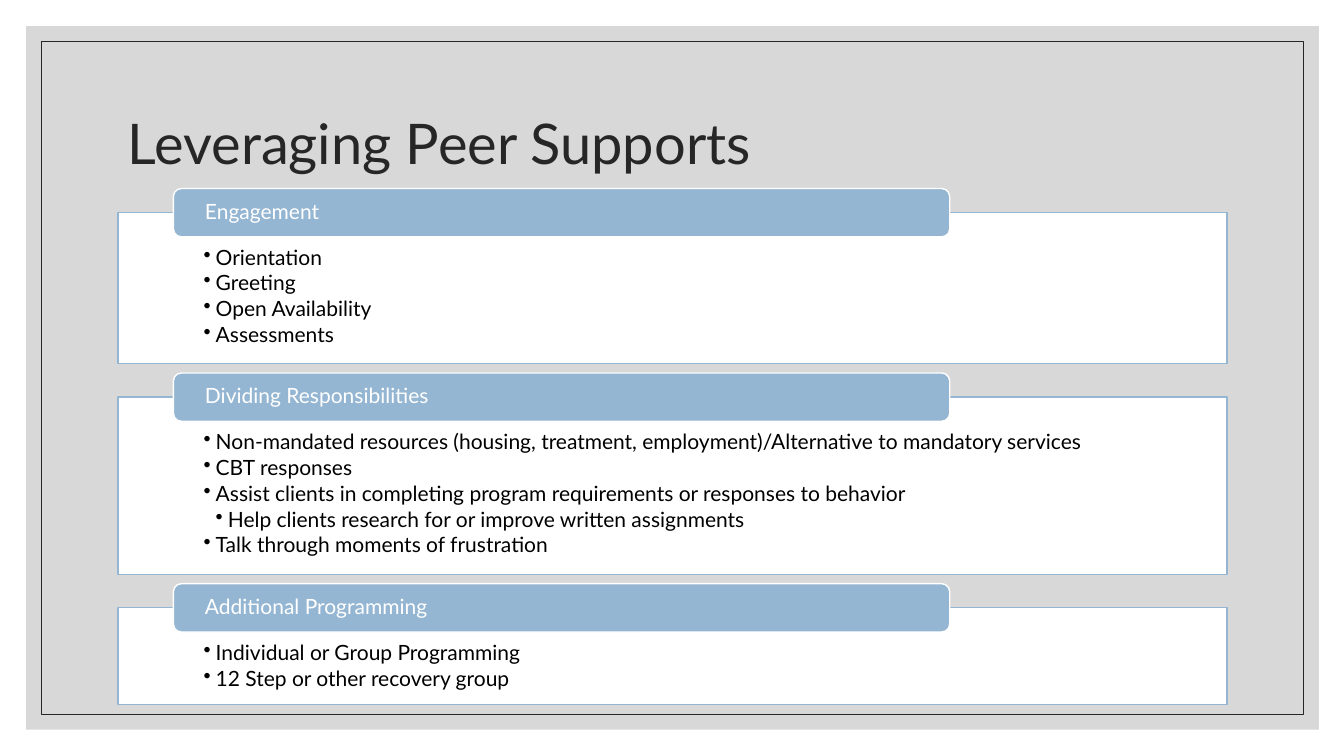
from dataclasses import dataclass

from lxml import etree
from pptx import Presentation
from pptx.dml.color import RGBColor
from pptx.enum.shapes import MSO_SHAPE
from pptx.enum.text import MSO_ANCHOR, PP_ALIGN
from pptx.oxml.ns import qn
from pptx.shapes.autoshape import Shape
from pptx.slide import Slide
from pptx.text.text import TextFrame, _Paragraph
from pptx.util import Emu, Pt

RECTANGLE = MSO_SHAPE.RECTANGLE
ROUNDED = MSO_SHAPE.ROUNDED_RECTANGLE
TOP = MSO_ANCHOR.TOP
MIDDLE = MSO_ANCHOR.MIDDLE
LEFT = PP_ALIGN.LEFT

EMU_PER_PX = 9144
FONT = "Lato"
DARK = "262626"
BLUE = "94B6D2"
WHITE = "FFFFFF"
BLACK = "000000"
GREY = "BFBFBF"

PANEL_LEFT, PANEL_WIDTH, FIRST_PANEL_TOP, PANEL_GAP = 117, 1100, 211, 33
HEADER_LEFT, HEADER_WIDTH, HEADER_HEIGHT = 172, 770, 48
BULLET_INDENT = 12


@dataclass(frozen=True)
class Box:
    left: int
    top: int
    width: int
    height: int


@dataclass(frozen=True)
class Bullet:
    text: str
    level: int = 1


@dataclass(frozen=True)
class Section:
    heading: str
    height: int
    bullets: tuple[Bullet, ...]


SECTIONS = (
    Section("Engagement", 150, (
        Bullet("Orientation"),
        Bullet("Greeting"),
        Bullet("Open Availability"),
        Bullet("Assessments"),
    )),
    Section("Dividing Responsibilities", 176, (
        Bullet("Non-mandated resources (housing, treatment, employment)"
               "/Alternative to mandatory services"),
        Bullet("CBT responses"),
        Bullet("Assist clients in completing program requirements or responses to behavior"),
        Bullet("Help clients research for or improve written assignments", level=2),
        Bullet("Talk through moments of frustration"),
    )),
    Section("Additional Programming", 96, (
        Bullet("Individual or Group Programming"),
        Bullet("12 Step or other recovery group"),
    )),
)


def px(length: int) -> Emu:
    """Turn whole pixels into EMU."""
    return Emu(length * EMU_PER_PX)


def color(value: str) -> RGBColor:
    """Turn a hex string into a colour."""
    return RGBColor.from_string(value)


def add_box(slide: Slide, kind: MSO_SHAPE, box: Box, fill: str | None = None,
            opacity: int = 100, line: str | None = None, line_width: float = 1) -> Shape:
    """Add a flat shape with an optional fill and outline."""
    shape = slide.shapes.add_shape(
        kind, px(box.left), px(box.top), px(box.width), px(box.height))
    shape.shadow.inherit = False
    if fill:
        shape.fill.solid()
        shape.fill.fore_color.rgb = color(fill)
        if opacity < 100:
            swatch = shape.fill._xPr.find(qn("a:solidFill"))[0]
            etree.SubElement(swatch, qn("a:alpha"), val=str(opacity * 1000))
    else:
        shape.fill.background()
    if line:
        shape.line.color.rgb = color(line)
        shape.line.width = Pt(line_width)
    else:
        shape.line.fill.background()
    return shape


def set_frame(frame: TextFrame, anchor: MSO_ANCHOR, side: int, top: int, bottom: int) -> None:
    """Set wrapping, anchor and insets of a text frame."""
    frame.word_wrap = True
    frame.vertical_anchor = anchor
    frame.margin_left = frame.margin_right = px(side)
    frame.margin_top, frame.margin_bottom = px(top), px(bottom)


def write(paragraph: _Paragraph, text: str, size: int, font_color: str) -> None:
    """Fill a left-aligned paragraph with styled text."""
    paragraph.text = text
    paragraph.alignment = LEFT
    paragraph.line_spacing = 0.9
    paragraph.font.name = FONT
    paragraph.font.size = Pt(size)
    paragraph.font.color.rgb = color(font_color)


def write_bullet(paragraph: _Paragraph, bullet: Bullet) -> None:
    """Write one bulleted paragraph at its level."""
    write(paragraph, bullet.text, 15, BLACK)
    paragraph.level = bullet.level
    paragraph.space_after = Pt(2.25)
    properties = paragraph._p.get_or_add_pPr()
    properties.set("marL", str(px(BULLET_INDENT * bullet.level)))
    properties.set("indent", str(px(-BULLET_INDENT)))
    marker = etree.Element(qn("a:buChar"), char="•")
    properties.find(qn("a:defRPr")).addprevious(marker)


def add_section(slide: Slide, section: Section, top: int) -> None:
    """Draw a bulleted panel with its overlapping heading."""
    panel = add_box(slide, RECTANGLE, Box(PANEL_LEFT, top, PANEL_WIDTH, section.height),
                    WHITE, line=BLUE)
    frame = panel.text_frame
    set_frame(frame, TOP, 85, 34, 12)
    for index, bullet in enumerate(section.bullets):
        write_bullet(frame.add_paragraph() if index else frame.paragraphs[0], bullet)

    header_top = top - HEADER_HEIGHT // 2
    header = add_box(slide, ROUNDED, Box(HEADER_LEFT, header_top, HEADER_WIDTH, HEADER_HEIGHT),
                     BLUE, line=WHITE)
    set_frame(header.text_frame, MIDDLE, 29, 2, 2)
    write(header.text_frame.paragraphs[0], section.heading, 15, WHITE)


def add_title(slide: Slide, text: str) -> None:
    """Add the slide title."""
    title = slide.shapes.add_textbox(px(117), px(70), px(1100), px(150))
    set_frame(title.text_frame, MIDDLE, 10, 5, 5)
    write(title.text_frame.paragraphs[0], text, 40, DARK)


def main() -> None:
    """Build and save the slide."""
    presentation = Presentation()
    presentation.slide_width, presentation.slide_height = px(1333), px(750)
    slide = presentation.slides.add_slide(presentation.slide_layouts[6])
    add_box(slide, RECTANGLE, Box(26, 26, 1282, 698), GREY, opacity=60)
    add_box(slide, RECTANGLE, Box(41, 41, 1252, 668), line=DARK, line_width=0.5)
    add_title(slide, "Leveraging Peer Supports")
    top = FIRST_PANEL_TOP
    for section in SECTIONS:
        add_section(slide, section, top)
        top += section.height + PANEL_GAP
    presentation.save("out.pptx")


if __name__ == "__main__":
    main()
